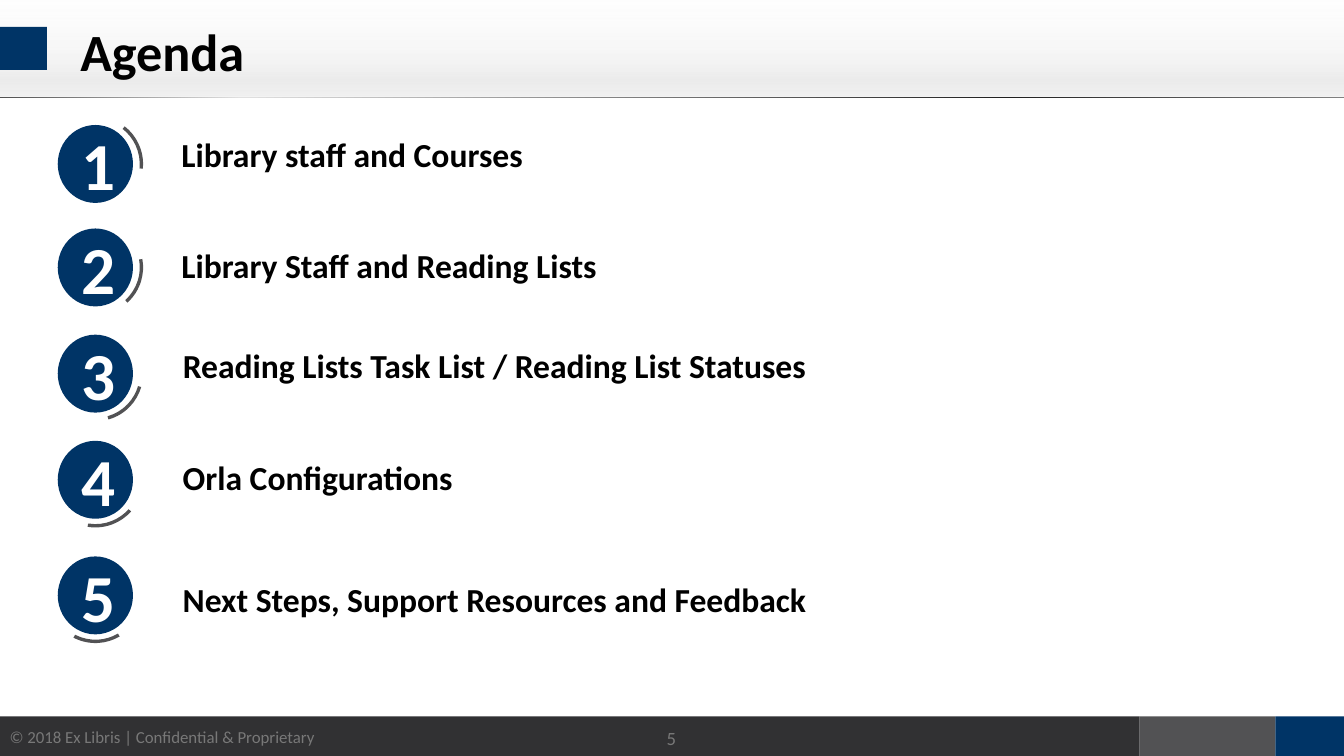
from dataclasses import dataclass
from typing import NamedTuple

from lxml.etree import SubElement
from pptx import Presentation
from pptx.dml.color import RGBColor as RGB
from pptx.enum.shapes import MSO_SHAPE as Kind
from pptx.enum.text import MSO_ANCHOR as Anchor, PP_ALIGN as Align
from pptx.oxml.ns import qn
from pptx.util import Inches, Pt

COLS, ROWS, CELL = 100, 56.25, 0.1


@dataclass(frozen=True)
class Theme:
    font: str = "Calibri"
    navy: str = "003466"
    dark: str = "313133"
    gray: str = "525254"
    mute: str = "787878"
    white: str = "FFFFFF"
    black: str = "000000"
    title: int = 28
    digit: int = 36
    label: int = 18
    page: int = 10
    note: int = 9


class Box(NamedTuple):
    x: float
    y: float
    w: float
    h: float


class Stop(NamedTuple):
    pos: int
    color: str
    alpha: int = 100


class Item(NamedTuple):
    text: str
    mid: float
    turn: float
    left: float
    line: float
    wide: float


THEME = Theme()
ITEMS = [
    Item("Library staff and Courses", 12.2, 5.1, 13, 11.5, 39.4),
    Item("Library Staff and Reading Lists", 19.9, 47, 13, 19.7, 39.4),
    Item("Reading Lists Task List / Reading List Statuses", 27.8, 73.5, 13.1, 27.2, 59.8),
    Item("Orla Configurations", 35.7, 98.8, 13.1, 35.5, 39.4),
    Item("Next Steps, Support Resources and Feedback", 44.3, 116.7, 13.1, 44.6, 48.7),
]
BAND = [Stop(0, "FAFAFA", 12), Stop(66, "D7D7D7", 30), Stop(83, "D7D7D7", 47), Stop(100, "E4E4E4", 54)]
RULE = [Stop(0, "505050"), Stop(18, "E0E0E0"), Stop(75, "202020"), Stop(100, "808080")]
HUB = 7.1
ARC = (181.725, 0.424, 0.035)


def cells(*vals: float) -> list:
    return [Inches(v * CELL) for v in vals]


def around(x: float, y: float, w: float, h: float) -> Box:
    return Box(x - w / 2, y - h / 2, w, h)


def draw(slide, kind, box: Box, color: str = ""):
    shape = slide.shapes.add_shape(kind, *cells(*box))
    shape.shadow.inherit = False
    shape.line.fill.background()
    if color:
        shape.fill.solid()
        shape.fill.fore_color.rgb = RGB.from_string(color)
    return shape


def blend(shape, stops: list[Stop], angle: int) -> None:
    shape.fill.gradient()
    shape.fill.gradient_angle = angle
    group = shape._element.spPr.find(qn("a:gradFill")).find(qn("a:gsLst"))
    for old in list(group):
        group.remove(old)
    for stop in stops:
        node = SubElement(group, qn("a:gs"), pos=str(stop.pos * 1000))
        tint = SubElement(node, qn("a:srgbClr"), val=stop.color)
        if stop.alpha < 100:
            SubElement(tint, qn("a:alpha"), val=str(stop.alpha * 1000))


def write(shape, text: str, *, size: int, color: str, bold: bool = False,
          align=Align.LEFT, anchor=Anchor.MIDDLE, wrap: bool = True, inset: float | None = None) -> None:
    frame = shape.text_frame
    frame.word_wrap = wrap
    frame.vertical_anchor = anchor
    if inset is not None:
        frame.margin_left = frame.margin_right = Inches(inset)
    par = frame.paragraphs[0]
    par.alignment = align
    run = par.add_run()
    run.text = text
    font = run.font
    font.name, font.size, font.bold = THEME.font, Pt(size), bold
    font.color.rgb = RGB.from_string(color)


def place(slide, box: Box, text: str, **form) -> None:
    write(slide.shapes.add_textbox(*cells(*box)), text, **form)


def frame(slide) -> None:
    foot = 53.3
    for left, right, color in ((0, 84.8, THEME.dark), (84.8, 94.9, THEME.gray), (94.9, COLS, THEME.navy)):
        draw(slide, Kind.RECTANGLE, Box(left, foot, right - left, ROWS - foot), color)
    place(slide, Box(-0.4, 53.6, 24.9, 2.5), "© 2018 Ex Libris | Confidential & Proprietary",
          size=THEME.note, color=THEME.mute, align=Align.CENTER, anchor=Anchor.TOP, wrap=False)
    blend(draw(slide, Kind.RECTANGLE, Box(0, 0, COLS, 7.2)), BAND, 270)
    draw(slide, Kind.RECTANGLE, Box(0, 2, 3.5, 3.2), THEME.navy)
    blend(draw(slide, Kind.RECTANGLE, Box(0, 7.2, COLS, 0.1)), RULE, 0)
    place(slide, Box(5, 0.6, 90.7, 6.3), "Agenda", size=THEME.title, color=THEME.black, bold=True)
    place(slide, Box(47, 52.9, 5.9, 4), "5", size=THEME.page, color=THEME.mute, align=Align.CENTER)


def entry(slide, num: int, item: Item) -> None:
    draw(slide, Kind.OVAL, around(HUB, item.mid, 6.5, 6.6), THEME.white)
    arc = draw(slide, Kind.BLOCK_ARC, around(HUB, item.mid, 7.1, 7.1), THEME.gray)
    for i, val in enumerate(ARC):
        arc.adjustments[i] = val
    arc.rotation = item.turn
    disc = draw(slide, Kind.OVAL, around(HUB, item.mid, 5.6, 5.8), THEME.navy)
    write(disc, str(num), size=THEME.digit, color=THEME.white, bold=True, align=Align.CENTER)
    place(slide, Box(item.left, item.line - 2.3, item.wide, 4.6), item.text,
          size=THEME.label, color=THEME.black, bold=True, inset=0.05)


def main() -> None:
    deck = Presentation()
    deck.slide_width, deck.slide_height = cells(COLS, ROWS)
    slide = deck.slides.add_slide(deck.slide_layouts[6])
    frame(slide)
    for num, item in enumerate(ITEMS, 1):
        entry(slide, num, item)
    deck.save("out.pptx")


if __name__ == "__main__":
    main()
